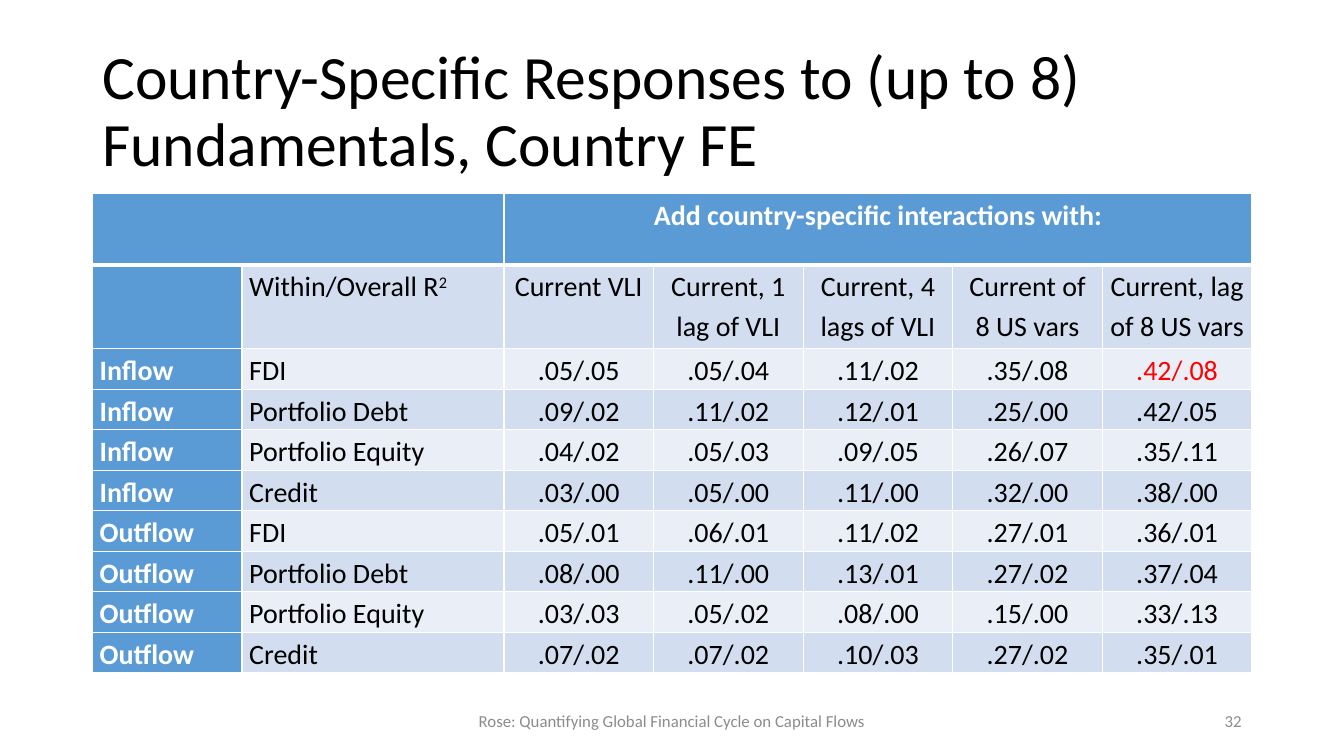
from pptx import Presentation
from pptx.dml.color import RGBColor
from pptx.enum.text import MSO_ANCHOR, PP_ALIGN
from pptx.oxml import parse_xml
from pptx.oxml.ns import nsdecls
from pptx.util import Cm, Pt

FONT = "Calibri"
BLACK = RGBColor(0x00, 0x00, 0x00)
WHITE = RGBColor(0xFF, 0xFF, 0xFF)
GRAY = RGBColor(0x8C, 0x8C, 0x8C)
RED = RGBColor(0xFF, 0x00, 0x00)
BLUE = RGBColor(0x5B, 0x9B, 0xD5)
BAND_DARK = RGBColor(0xD2, 0xDE, 0xEF)
BAND_LIGHT = RGBColor(0xEA, 0xEF, 0xF7)

LEFT, WIDTH = 2.33, 29.21
COL_W, LABEL_W = 3.77, 6.6
ROW_H, TOP_ROW_H, HEADER_H = 1.02, 1.8, 2.11

HEADERS = ["", "Within/Overall R", "Current VLI", "Current, 1 lag of VLI",
           "Current, 4 lags of VLI", "Current of 8 US vars",
           "Current, lag of 8 US vars"]
RESULTS = [
    ["Inflow", "FDI", ".05/.05", ".05/.04", ".11/.02", ".35/.08", ".42/.08"],
    ["Inflow", "Portfolio Debt", ".09/.02", ".11/.02", ".12/.01", ".25/.00", ".42/.05"],
    ["Inflow", "Portfolio Equity", ".04/.02", ".05/.03", ".09/.05", ".26/.07", ".35/.11"],
    ["Inflow", "Credit", ".03/.00", ".05/.00", ".11/.00", ".32/.00", ".38/.00"],
    ["Outflow", "FDI", ".05/.01", ".06/.01", ".11/.02", ".27/.01", ".36/.01"],
    ["Outflow", "Portfolio Debt", ".08/.00", ".11/.00", ".13/.01", ".27/.02", ".37/.04"],
    ["Outflow", "Portfolio Equity", ".03/.03", ".05/.02", ".08/.00", ".15/.00", ".33/.13"],
    ["Outflow", "Credit", ".07/.02", ".07/.02", ".10/.03", ".27/.02", ".35/.01"],
]


def format_paragraph(p, size, color, align, spacing, bold=False):
    p.alignment = align
    p.line_spacing = spacing
    for r in p.runs:
        r.font.name = FONT
        r.font.size = Pt(size)
        r.font.bold = bold
        r.font.color.rgb = color


def add_text(s, text, left, top, width, height, size, color,
             align=PP_ALIGN.LEFT, spacing=1.0):
    tf = s.shapes.add_textbox(Cm(left), Cm(top), Cm(width), Cm(height)).text_frame
    tf.word_wrap = True
    tf.vertical_anchor = MSO_ANCHOR.MIDDLE
    tf.text = text
    format_paragraph(tf.paragraphs[0], size, color, align, spacing)


def set_borders(cell, top=1, bottom=1):
    tcPr = cell._tc.get_or_add_tcPr()
    widths = {"lnL": 1, "lnR": 1, "lnT": top, "lnB": bottom}
    for i, (side, width) in enumerate(widths.items()):
        ln = parse_xml(f'<a:{side} {nsdecls("a")} w="{Pt(width)}"><a:solidFill>'
                       f'<a:srgbClr val="{WHITE}"/></a:solidFill></a:{side}>')
        tcPr.insert(i, ln)


def fill_cell(cell, text, fill, color=BLACK, align=PP_ALIGN.LEFT, bold=False,
              superscript="", top=1, bottom=1):
    cell.margin_left = cell.margin_right = Cm(0.18)
    cell.margin_top = cell.margin_bottom = 0
    cell.fill.solid()
    cell.fill.fore_color.rgb = fill
    set_borders(cell, top, bottom)
    p = cell.text_frame.paragraphs[0]
    p.text = text
    if superscript:
        r = p.add_run()
        r.text = superscript
        r.font._element.set("baseline", "30000")
    format_paragraph(p, 20, color, align, 1.15, bold)


def add_results_table(s):
    rows, cols = len(RESULTS) + 2, len(HEADERS)
    height = TOP_ROW_H + HEADER_H + ROW_H * len(RESULTS)
    table = s.shapes.add_table(rows, cols, Cm(LEFT), Cm(4.88),
                               Cm(WIDTH), Cm(height)).table
    for i, col in enumerate(table.columns):
        col.width = Cm(LABEL_W if i == 1 else COL_W)
    for i, row in enumerate(table.rows):
        row.height = Cm({0: TOP_ROW_H, 1: HEADER_H}.get(i, ROW_H))

    # Spanning top row
    titles = {2: "Add country-specific interactions with:"}
    for c in range(cols):
        fill_cell(table.cell(0, c), titles.get(c, ""), BLUE, WHITE,
                  PP_ALIGN.CENTER, bold=True, bottom=3)
    table.cell(0, 0).merge(table.cell(0, 1))
    table.cell(0, 2).merge(table.cell(0, cols - 1))

    # Column headers and banded results
    for r, values in enumerate([HEADERS] + RESULTS, start=1):
        band = BAND_DARK if r % 2 else BAND_LIGHT
        for c, text in enumerate(values):
            is_flow = c == 0
            color = WHITE if is_flow else RED if (r, c) == (2, 6) else BLACK
            fill_cell(table.cell(r, c), text, BLUE if is_flow else band, color,
                      PP_ALIGN.CENTER if c > 1 else PP_ALIGN.LEFT, is_flow,
                      superscript="2" if (r, c) == (1, 1) else "",
                      top=3 if r == 1 else 1)


def main():
    prs = Presentation()
    prs.slide_width, prs.slide_height = Cm(33.87), Cm(19.05)
    s = prs.slides.add_slide(prs.slide_layouts[6])

    # Title
    add_text(s, "Country-Specific Responses to (up to 8) Fundamentals, Country FE",
             LEFT, 1.01, WIDTH, 3.68, 44, BLACK, spacing=0.9)

    add_results_table(s)

    # Footer and slide number
    add_text(s, "Rose: Quantifying Global Financial Cycle on Capital Flows",
             11.22, 17.66, 11.43, 1.01, 12, GRAY, PP_ALIGN.CENTER)
    add_text(s, "32", 23.92, 17.66, 7.62, 1.01, 12, GRAY, PP_ALIGN.RIGHT)

    prs.save("out.pptx")


if __name__ == "__main__":
    main()
